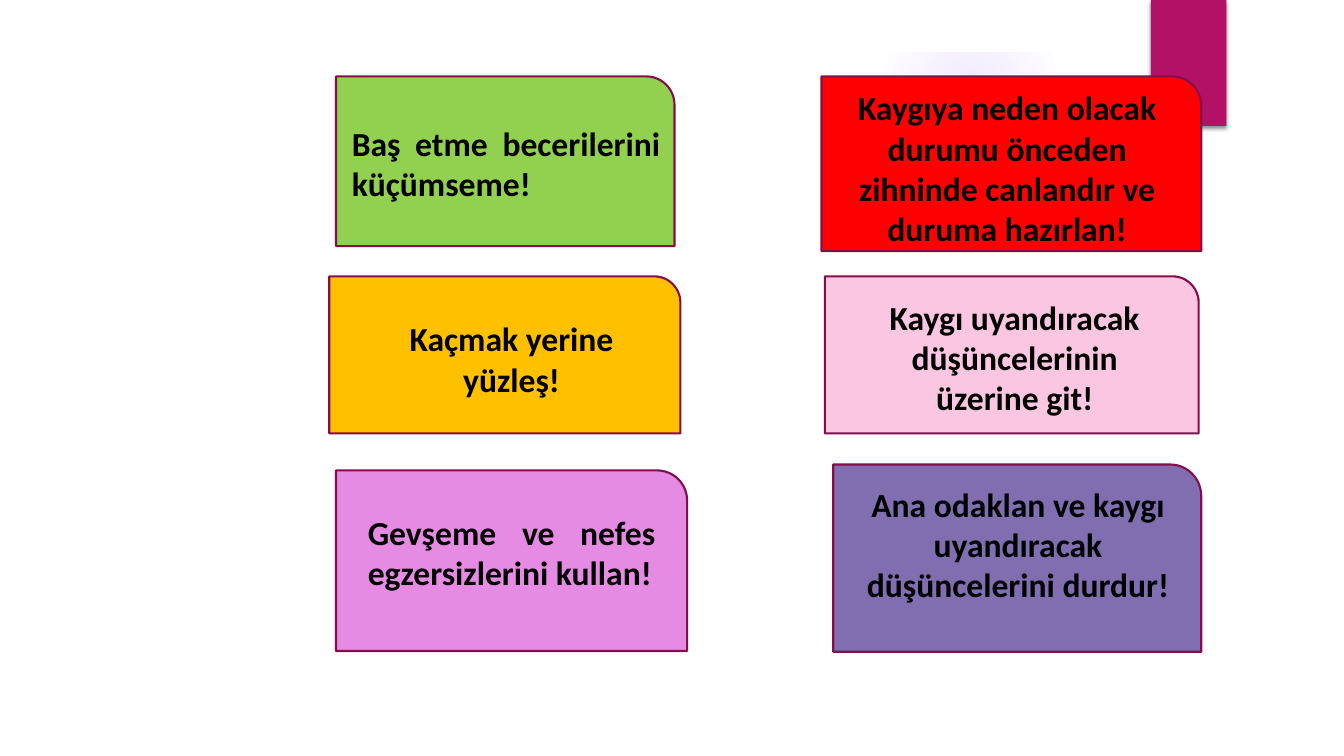
import pptx
import pptx.util
from lxml import etree
from pptx.dml.color import RGBColor
from pptx.enum.shapes import MSO_SHAPE
from pptx.enum.text import MSO_ANCHOR, MSO_AUTO_SIZE, PP_ALIGN
from pptx.oxml import parse_xml
from pptx.oxml.ns import nsdecls, qn

COLUMNS, ROWS = 160, 90
WIDTH, HEIGHT = pptx.util.Inches(13.33), pptx.util.Inches(7.5)

WHITE = RGBColor(0xFF, 0xFF, 0xFF)
BLACK = RGBColor(0x00, 0x00, 0x00)
GLOW = RGBColor(0x9B, 0x6B, 0xF2)
MAGENTA = RGBColor(0xB3, 0x11, 0x66)
OUTLINE = RGBColor(0x84, 0x0D, 0x4B)
GREEN = RGBColor(0x92, 0xD0, 0x50)
AMBER = RGBColor(0xFF, 0xC0, 0x00)
ORCHID = RGBColor(0xE6, 0x8B, 0xE3)
RED = RGBColor(0xFF, 0x00, 0x00)
PINK = RGBColor(0xFA, 0xC6, 0xE1)
PURPLE = RGBColor(0x80, 0x6E, 0xB1)

LEFT_COLUMN = (40, 9.1)
RIGHT_COLUMN = (98, 9.1)

LEFT_ADVICE = [
    ("Baş etme becerilerini küçümseme!", GREEN, PP_ALIGN.JUSTIFY,
     (0, 0, 40.3, 20.2), (0.7, 4.9, 39.1, 10.9)),
    ("Kaçmak yerine yüzleş!", AMBER, PP_ALIGN.CENTER,
     (-0.8, 23.8, 41.8, 18.7), (3.4, 4.4, 36.6, 10.9)),
    ("Gevşeme ve nefes egzersizlerini kullan!", ORCHID, PP_ALIGN.JUSTIFY,
     (0, 46.9, 41.8, 21.5), (2.6, 4.3, 36.6, 10.9)),
]
RIGHT_ADVICE = [
    ("Kaygıya neden olacak durumu önceden zihninde canlandır ve duruma hazırlan!",
     RED, PP_ALIGN.CENTER, (-0.2, 0, 45.2, 20.8), (1.4, 0.7, 41.4, 20.6)),
    ("Kaygı uyandıracak düşüncelerinin üzerine git!",
     PINK, PP_ALIGN.CENTER, (0.2, 23.8, 44.5, 18.7), (2.7, 1.8, 39.8, 15.7)),
    ("Ana odaklan ve kaygı uyandıracak düşüncelerini durdur!",
     PURPLE, PP_ALIGN.CENTER, (1.2, 46.2, 43.8, 22.3), (2.8, 1.7, 38.4, 20.6)),
]


def to_slide(box):
    left, top, width, height = box
    return (round(left * WIDTH / COLUMNS), round(top * HEIGHT / ROWS),
            round(width * WIDTH / COLUMNS), round(height * HEIGHT / ROWS))


def inside(origin, box):
    return (origin[0] + box[0], origin[1] + box[1], box[2], box[3])


def add_block(slide, preset, box, fill, outline=None):
    block = slide.shapes.add_shape(preset, *to_slide(box))
    block.shadow.inherit = False
    block.fill.solid()
    block.fill.fore_color.rgb = fill
    if outline is None:
        block.line.fill.background()
    else:
        block.line.color.rgb = outline
        block.line.width = pptx.util.Pt(1.5)
    return block


def add_text(slide, text, box, align=PP_ALIGN.CENTER, size=24, color=BLACK,
             font="Calibri", bold=True):
    caption = slide.shapes.add_textbox(*to_slide(box))
    frame = caption.text_frame
    frame.word_wrap = True
    frame.auto_size = MSO_AUTO_SIZE.SHAPE_TO_FIT_TEXT
    frame.vertical_anchor = MSO_ANCHOR.TOP
    paragraph = frame.paragraphs[0]
    paragraph.alignment = align
    run = paragraph.add_run()
    run.text = text
    run.font.name = font
    run.font.size = pptx.util.Pt(size)
    run.font.bold = bold
    run.font.color.rgb = color


def add_glow(slide, box):
    glow = add_block(slide, MSO_SHAPE.OVAL, box, GLOW)
    stops = "".join(
        f'<a:gs pos="{position * 1000}"><a:srgbClr val="{GLOW}">'
        f'<a:alpha val="{alpha * 1000}"/></a:srgbClr></a:gs>'
        for position, alpha in ((0, 14), (36, 7), (73, 0)))
    gradient = parse_xml(
        f'<a:gradFill {nsdecls("a")}><a:gsLst>{stops}</a:gsLst><a:path path="circle">'
        '<a:fillToRect l="50000" t="50000" r="50000" b="50000"/></a:path></a:gradFill>')
    properties = glow.element.spPr
    properties.replace(properties.find(qn("a:solidFill")), gradient)


def add_ribbon(slide, box):
    ribbon = add_block(slide, MSO_SHAPE.RECTANGLE, box, MAGENTA)
    shadow = etree.SubElement(
        ribbon.element.spPr.find(qn("a:effectLst")), qn("a:outerShdw"),
        blurRad=str(pptx.util.Pt(3)), dist=str(pptx.util.Pt(2)), dir="5400000",
        rotWithShape="0")
    tint = etree.SubElement(shadow, qn("a:srgbClr"), val=str(BLACK))
    etree.SubElement(tint, qn("a:alpha"), val="45000")


def add_backdrop(slide):
    add_glow(slide, (105, 0.1, 21, 21))
    add_block(slide, MSO_SHAPE.RECTANGLE, (0, 0, COLUMNS, 6.2), WHITE)
    add_ribbon(slide, (137, 0, 9, 15))


def add_advice_column(slide, origin, advice):
    for text, fill, align, card, caption in advice:
        card = inside(origin, card)
        add_block(slide, MSO_SHAPE.ROUND_1_RECTANGLE, card, fill, OUTLINE)
        add_text(slide, text, inside(card, caption), align=align)


def main():
    deck = pptx.Presentation()
    deck.slide_width, deck.slide_height = WIDTH, HEIGHT
    slide = deck.slides.add_slide(deck.slide_layouts[6])
    slide.background.fill.solid()
    slide.background.fill.fore_color.rgb = WHITE
    add_backdrop(slide)
    add_advice_column(slide, LEFT_COLUMN, LEFT_ADVICE)
    add_advice_column(slide, RIGHT_COLUMN, RIGHT_ADVICE)
    deck.save("out.pptx")


if __name__ == "__main__":
    main()
